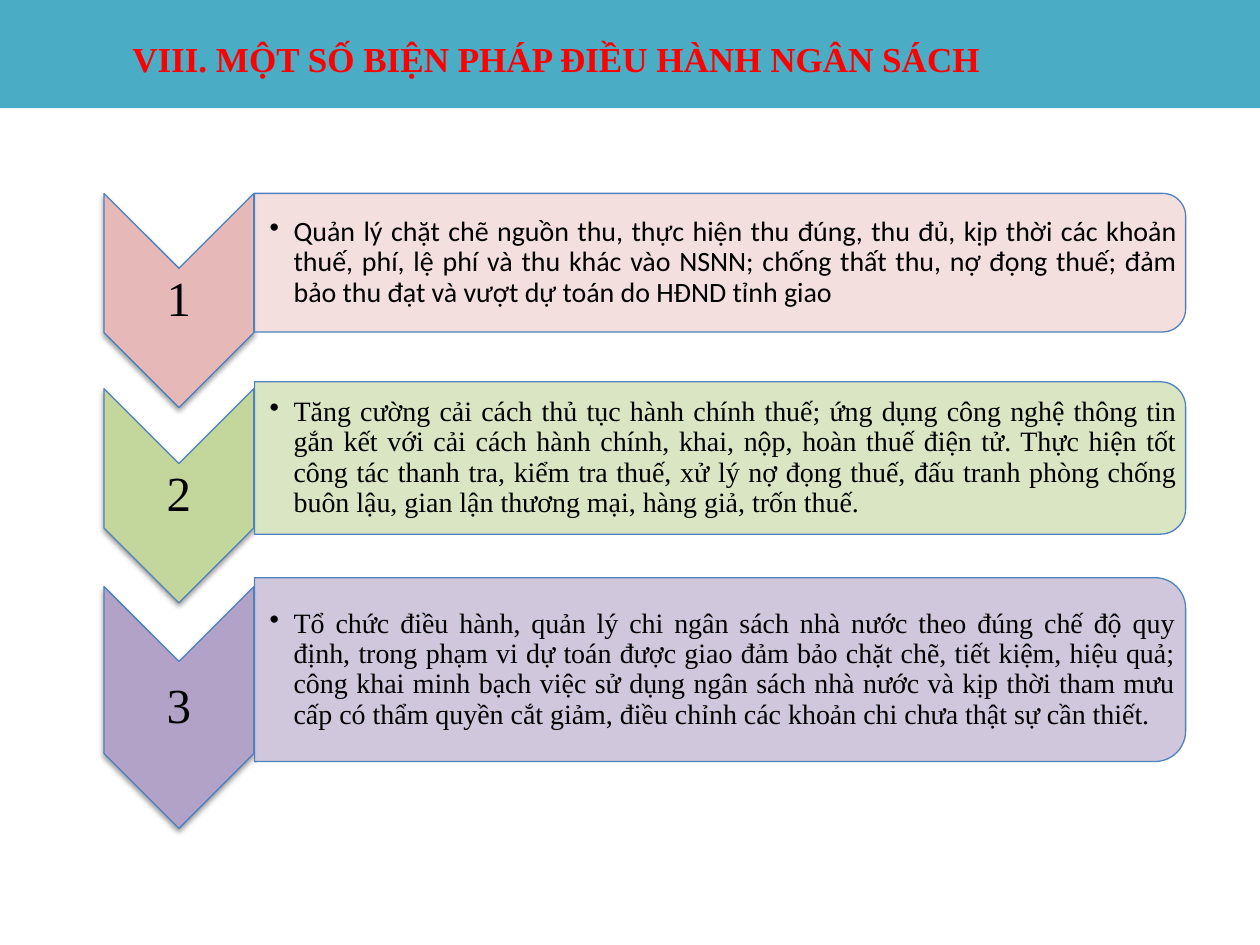
from dataclasses import dataclass

from lxml.etree import SubElement
from pptx import Presentation
from pptx.dml.color import RGBColor
from pptx.enum.shapes import MSO_SHAPE as SHAPE
from pptx.enum.text import MSO_ANCHOR as ANCHOR, PP_ALIGN as ALIGN
from pptx.oxml.ns import qn
from pptx.util import Inches, Pt

SERIF = "Times New Roman"
BANNER, EDGE, RED, BLACK = "4AACC5", "4F81BD", "FF0000", "000000"

CHEVRON_X, CHEVRON_W = 1.42, 1.19     # centre and visible width
BAR_LEFT, BAR_W = 2.02, 7.39
BAR_RISE = 0.3                        # bar centre above chevron centre


@dataclass
class Step:
    centre: float                     # vertical centre of the chevron
    length: float                     # visible height of the chevron
    bar_height: float
    dark: str
    light: str
    text: str
    font: str = SERIF


STEPS = [
    Step(2.385, 1.70, 1.10, "E6B9B8", "F2DCDB",
         "Quản lý chặt chẽ nguồn thu, thực hiện thu đúng, thu đủ, kịp thời các "
         "khoản thuế, phí, lệ phí và thu khác vào NSNN; chống thất thu, nợ đọng "
         "thuế; đảm bảo thu đạt và vượt dự toán do HĐND tỉnh giao", "Calibri"),
    Step(3.935, 1.70, 1.21, "C3D69B", "D7E4BD",
         "Tăng cường cải cách thủ tục hành chính thuế; ứng dụng công nghệ thông "
         "tin gắn kết với cải cách hành chính, khai, nộp, hoàn thuế điện tử. "
         "Thực hiện tốt công tác thanh tra, kiểm tra thuế, xử lý nợ đọng thuế, "
         "đấu tranh phòng chống buôn lậu, gian lận thương mại, hàng giả, trốn "
         "thuế."),
    Step(5.615, 1.92, 1.46, "B3A2C7", "CCC1DA",
         "Tổ chức điều hành, quản lý chi ngân sách nhà nước theo đúng chế độ "
         "quy định, trong phạm vi dự toán được giao đảm bảo chặt chẽ, tiết "
         "kiệm, hiệu quả; công khai minh bạch việc sử dụng ngân sách nhà nước "
         "và kịp thời tham mưu cấp có thẩm quyền cắt giảm, điều chỉnh các khoản "
         "chi chưa thật sự cần thiết."),
]


def rgb(value: str) -> RGBColor:
    return RGBColor.from_string(value)


def add_shape(s, kind, x: float, y: float, w: float, h: float, fill: str,
              line: str | None = None, rotation: float = 0):
    sp = s.shapes.add_shape(kind, Inches(x), Inches(y), Inches(w), Inches(h))
    sp.rotation = rotation
    sp.shadow.inherit = False
    sp.fill.solid()
    sp.fill.fore_color.rgb = rgb(fill)
    if line:
        sp.line.color.rgb = rgb(line)
        sp.line.width = Pt(0.75)
    else:
        sp.line.fill.background()
    return sp


def add_turned(s, kind, cx: float, cy: float, w: float, h: float, fill: str):
    """Preset turned by 90 degrees; w and h are the size as seen."""
    return add_shape(s, kind, cx - h / 2, cy - w / 2, h, w, fill, EDGE, 90)


def set_alpha(sp, percent: int) -> None:
    clr = sp.fill._xPr.find(qn("a:solidFill"))[0]
    SubElement(clr, qn("a:alpha"), val=str(percent * 1000))


def add_shadow(sp) -> None:
    effects = sp._element.spPr.find(qn("a:effectLst"))
    shadow = SubElement(effects, qn("a:outerShdw"), blurRad=str(Pt(3.1)),
                        dist=str(Pt(1.6)), dir="5400000", rotWithShape="0")
    clr = SubElement(shadow, qn("a:srgbClr"), val=BLACK)
    SubElement(clr, qn("a:alpha"), val="38000")


def add_text(s, text: str, x: float, y: float, w: float, h: float, *,
             size: float, font: str = SERIF, color: str = BLACK,
             bold: bool = False, align=ALIGN.LEFT, anchor=ANCHOR.MIDDLE,
             spacing: float = 0.9, inset: float = 0, left: float | None = None,
             bullet: bool = False) -> None:
    sp = s.shapes.add_textbox(Inches(x), Inches(y), Inches(w), Inches(h))
    tf = sp.text_frame
    tf.word_wrap = True
    tf.vertical_anchor = anchor
    tf.margin_top = tf.margin_right = tf.margin_bottom = Inches(inset)
    tf.margin_left = Inches(inset if left is None else left)
    p = tf.paragraphs[0]
    p.alignment = align
    p.line_spacing = spacing
    if bullet:
        pPr = p._p.get_or_add_pPr()
        pPr.set("marL", str(Inches(0.19)))
        pPr.set("indent", str(-Inches(0.19)))
        SubElement(pPr, qn("a:buChar"), char="•")
    r = p.add_run()
    r.text = text
    r.font.name = font
    r.font.size = Pt(size)
    r.font.bold = bold
    r.font.color.rgb = rgb(color)


def add_step(s, number: int, step: Step) -> None:
    # Numbered chevron
    chevron = add_turned(s, SHAPE.CHEVRON, CHEVRON_X, step.centre,
                         CHEVRON_W, step.length, step.dark)
    add_shadow(chevron)
    label_h = step.length - CHEVRON_W
    add_text(s, str(number), CHEVRON_X - CHEVRON_W / 2,
             step.centre - label_h / 2, CHEVRON_W, label_h,
             size=28, align=ALIGN.CENTER, inset=0.02)

    # Bar with its bullet text
    bar_y = step.centre - BAR_RISE
    bar = add_turned(s, SHAPE.ROUND_2_SAME_RECTANGLE, BAR_LEFT + BAR_W / 2,
                     bar_y, BAR_W, step.bar_height, step.light)
    set_alpha(bar, 90)
    body_h = step.bar_height * 0.9
    add_text(s, step.text, BAR_LEFT, bar_y - body_h / 2,
             BAR_W - step.bar_height * 0.05, body_h, size=16, font=step.font,
             align=ALIGN.JUSTIFY, inset=0.01, left=0.12, bullet=True)


def main() -> None:
    prs = Presentation()
    prs.slide_width, prs.slide_height = Inches(10), Inches(7.5)
    s = prs.slides.add_slide(prs.slide_layouts[6])

    # Steps
    for number, step in enumerate(STEPS, 1):
        add_step(s, number, step)

    # Title banner
    add_shape(s, SHAPE.RECTANGLE, 0, 0, 10, 0.86, BANNER)
    add_text(s, "VIII. MỘT SỐ BIỆN PHÁP ĐIỀU HÀNH NGÂN SÁCH",
             1.05, 0.3, 8.45, 0.56, size=20, color=RED, bold=True,
             anchor=ANCHOR.TOP, spacing=1.0)

    prs.save("out.pptx")


if __name__ == "__main__":
    main()
